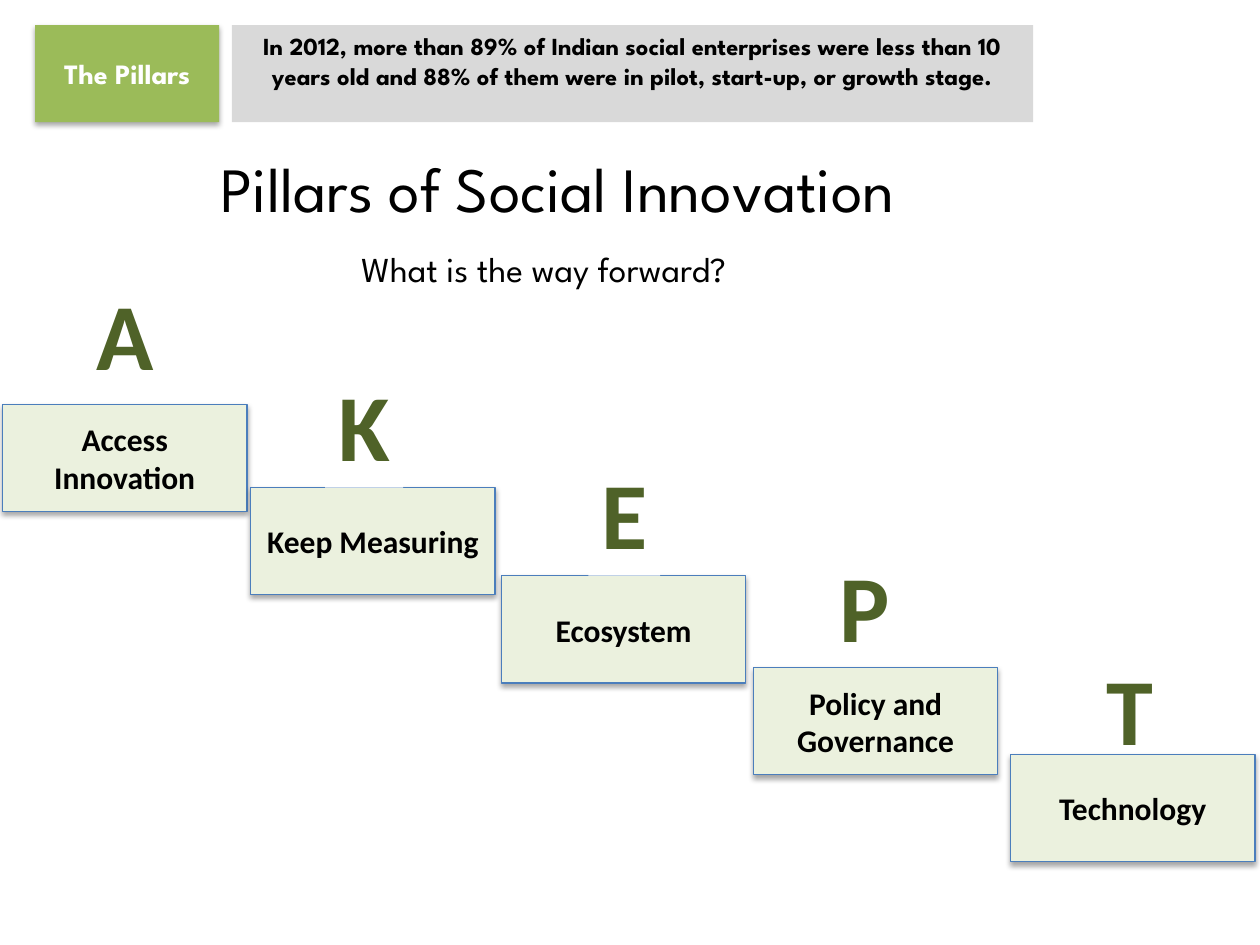
from dataclasses import dataclass

from lxml import etree
from pptx import Presentation
from pptx.dml.color import RGBColor
from pptx.enum.shapes import MSO_SHAPE
from pptx.enum.text import MSO_ANCHOR, MSO_AUTO_SIZE, PP_ALIGN
from pptx.oxml.ns import qn
from pptx.util import Inches, Pt

RECT = MSO_SHAPE.RECTANGLE
TOP, MIDDLE = MSO_ANCHOR.TOP, MSO_ANCHOR.MIDDLE
LEFT, CENTER = PP_ALIGN.LEFT, PP_ALIGN.CENTER
FIT, FIXED = MSO_AUTO_SIZE.SHAPE_TO_FIT_TEXT, MSO_AUTO_SIZE.NONE

SPARTAN, CALIBRI = "League Spartan", "Calibri"
BLACK, WHITE = "000000", "FFFFFF"
GREEN, PALE, DARK = "9BBB59", "EBF1DE", "4F6228"
GREY, BLUE = "D9D9D9", "4B7EBC"


@dataclass(frozen=True)
class Font:
    name: str
    size: int
    color: str = BLACK
    bold: bool = False


@dataclass(frozen=True)
class Box:
    left: float
    top: float
    width: float
    height: float


@dataclass(frozen=True)
class Pillar:
    letter: str
    label: str
    block: tuple[float, float]
    tile: Box
    behind: bool = False


PILLARS = [
    Pillar("A", "Access Innovation", (0.02, 3.21), Box(0.66, 2.14, 0.66, 1.01)),
    Pillar("K", "Keep Measuring", (1.99, 3.87), Box(2.58, 2.86, 0.62, 1.01)),
    Pillar("E", "Ecosystem", (3.98, 4.57), Box(4.67, 3.56, 0.57, 1.01)),
    Pillar("P", "Policy and Governance", (5.98, 5.3),
           Box(6.56, 4.3, 0.61, 1.01), behind=True),
    Pillar("T", "Technology", (8.02, 5.99),
           Box(8.68, 5.12, 0.57, 1.01), behind=True),
]


def rgb(code: str) -> RGBColor:
    return RGBColor.from_string(code)


def place(shape, box: Box) -> None:
    shape.left, shape.top = Inches(box.left), Inches(box.top)
    shape.width, shape.height = Inches(box.width), Inches(box.height)


def write(shape, text: str, font: Font, align=CENTER, anchor=MIDDLE):
    """Put one formatted run in the shape and return its paragraph."""
    frame = shape.text_frame
    frame.word_wrap = True
    frame.auto_size = FIXED
    frame.vertical_anchor = anchor
    para = frame.paragraphs[0]
    para.alignment = align
    run = para.add_run()
    run.text = text
    run.font.name, run.font.size = font.name, Pt(font.size)
    run.font.bold = font.bold
    run.font.color.rgb = rgb(font.color)
    return para


def cast(shape) -> None:
    """Give the shape a soft shadow straight below it."""
    effects = shape._element.spPr.find(qn("a:effectLst"))
    outer = etree.SubElement(effects, qn("a:outerShdw"), blurRad="40000",
                             dist="23000", dir="5400000", rotWithShape="0")
    color = etree.SubElement(outer, qn("a:srgbClr"), val=BLACK)
    etree.SubElement(color, qn("a:alpha"), val="35000")


def panel(slide, box: Box, text: str, font: Font, fill: str,
          line: str = "", shadow: bool = False, anchor=MIDDLE):
    shape = slide.shapes.add_shape(RECT, 0, 0, 0, 0)
    place(shape, box)
    shape.fill.solid()
    shape.fill.fore_color.rgb = rgb(fill)
    if line:
        shape.line.color.rgb = rgb(line)
        shape.line.width = Pt(0.75)
    else:
        shape.line.fill.background()
    shape.shadow.inherit = False
    if shadow:
        cast(shape)
    write(shape, text, font, anchor=anchor)
    return shape


def letters(slide, behind: bool) -> None:
    """Draw the big initials that lie behind or before the blocks."""
    font = Font(CALIBRI, 54, DARK, True)
    for item in PILLARS:
        if item.behind == behind:
            tile = panel(slide, item.tile, item.letter, font, WHITE, anchor=TOP)
            tile.text_frame.word_wrap = False
            tile.text_frame.auto_size = FIT


def blocks(slide) -> None:
    font = Font(CALIBRI, 18, BLACK, True)
    for item in PILLARS:
        panel(slide, Box(*item.block, 1.94, 0.85), item.label, font,
              PALE, line=BLUE, shadow=True)


def heading(slide) -> None:
    title = slide.shapes.title
    place(title, Box(1.65, 0.86, 8.07, 1.25))
    write(title, "Pillars of Social Innovation", Font(SPARTAN, 36), LEFT)
    query = slide.shapes.add_textbox(0, 0, 0, 0)
    place(query, Box(2.77, 1.75, 4, 0.65))
    para = write(query, "What is the way forward?", Font(SPARTAN, 20), LEFT, TOP)
    para.line_spacing = 1.5


def banner(slide) -> None:
    panel(slide, Box(1.84, 0.2, 6.36, 0.77),
          "In 2012, more than 89% of Indian social enterprises were less than "
          "10 years old and 88% of them were in pilot, start-up, or growth stage.",
          Font(SPARTAN, 14, BLACK, True), GREY, anchor=TOP)
    panel(slide, Box(0.28, 0.2, 1.46, 0.77), "The Pillars",
          Font(SPARTAN, 16, WHITE, True), GREEN, shadow=True)


def main() -> None:
    deck = Presentation()
    deck.slide_width, deck.slide_height = Inches(10), Inches(7.5)
    slide = deck.slides.add_slide(deck.slide_layouts.get_by_name("Title Only"))
    heading(slide)
    letters(slide, behind=True)
    banner(slide)
    blocks(slide)
    letters(slide, behind=False)
    deck.save("out.pptx")


if __name__ == "__main__":
    main()
